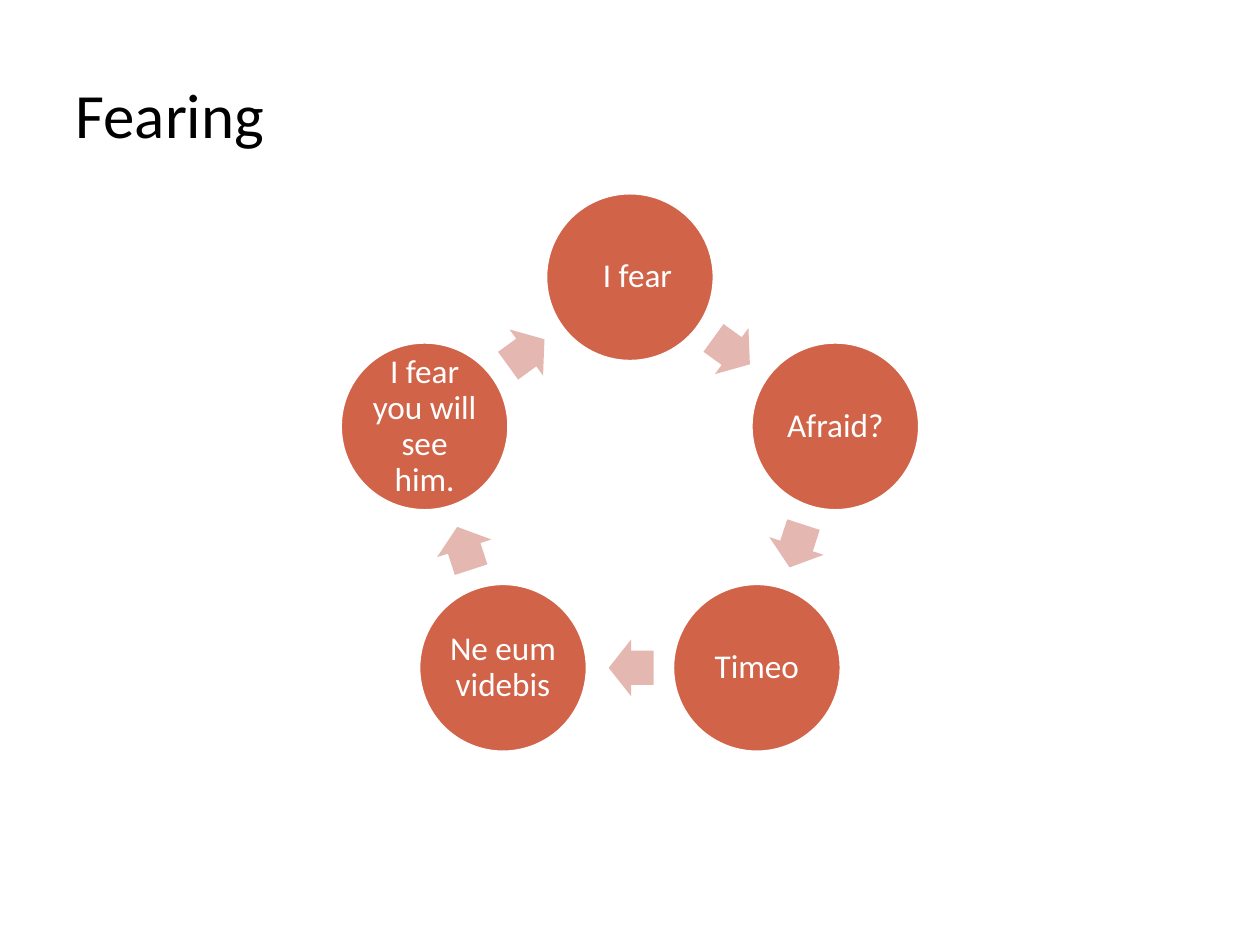
"""Build a slide with a five-step circular cycle about fearing."""
from math import cos, radians, sin

from pptx import Presentation
from pptx.dml.color import RGBColor
from pptx.enum.shapes import MSO_SHAPE
from pptx.enum.text import MSO_ANCHOR, PP_ALIGN
from pptx.util import Pt

COLORS = {"title": "000000", "node": "D16349", "arrow": "E5B7B1", "white": "FFFFFF"}
FONT = "Calibri"
STEPS = ["I fear", "Afraid?", "Timeo", "Ne eum videbis", "I fear you will see him."]
FIRST_INDENT = 8.6
CENTER_X, CENTER_Y, RADIUS = 360, 281.8, 123.4
NODE_SIZE = 96.5
ARROW_W, ARROW_H = 25.7, 32.6
ARROW_SETBACK = 0.7
INSET = 2.16


def rgb(name):
    return RGBColor.from_string(COLORS[name])


def add_run(p, text, size, color):
    r = p.add_run()
    r.text = text
    r.font.name = FONT
    r.font.size = Pt(size)
    r.font.color.rgb = rgb(color)


def add_title(s, text):
    sp = s.shapes.title
    sp.left, sp.top, sp.width, sp.height = Pt(36), Pt(6), Pt(534), Pt(84)
    tf = sp.text_frame
    tf.vertical_anchor = MSO_ANCHOR.BOTTOM
    p = tf.paragraphs[0]
    p.alignment = PP_ALIGN.LEFT
    add_run(p, text, 36, "title")


def add_centered(s, kind, x, y, w, h, fill):
    sp = s.shapes.add_shape(kind, Pt(x - w / 2), Pt(y - h / 2), Pt(w), Pt(h))
    sp.shadow.inherit = False
    sp.fill.solid()
    sp.fill.fore_color.rgb = rgb(fill)
    return sp


def add_node(s, x, y, text, indent):
    sp = add_centered(s, MSO_SHAPE.OVAL, x, y, NODE_SIZE, NODE_SIZE, "node")
    sp.line.color.rgb = rgb("white")
    sp.line.width = Pt(2)
    tf = sp.text_frame
    tf.word_wrap = True
    tf.vertical_anchor = MSO_ANCHOR.MIDDLE
    tf.margin_left = Pt(INSET + indent)
    tf.margin_right = tf.margin_top = tf.margin_bottom = Pt(INSET)
    p = tf.paragraphs[0]
    p.alignment = PP_ALIGN.CENTER
    p.line_spacing = 0.9
    add_run(p, text, 19, "white")


def add_arrow(s, x, y, angle):
    x -= ARROW_SETBACK * cos(radians(angle))
    y -= ARROW_SETBACK * sin(radians(angle))
    sp = add_centered(s, MSO_SHAPE.RIGHT_ARROW, x, y, ARROW_W, ARROW_H, "arrow")
    sp.line.fill.background()
    sp.adjustments[0] = 0.6
    sp.adjustments[1] = 0.5
    sp.rotation = angle


def ring_point(angle, radius):
    a = radians(angle)
    return CENTER_X + radius * sin(a), CENTER_Y - radius * cos(a)


def add_cycle(s, steps):
    step = 360 / len(steps)
    mid_radius = RADIUS * cos(radians(step / 2))
    for i, text in enumerate(steps):
        angle = i * step
        add_node(s, *ring_point(angle, RADIUS), text, 0 if i else FIRST_INDENT)
        mid = angle + step / 2
        add_arrow(s, *ring_point(mid, mid_radius), mid)


def main():
    prs = Presentation()
    prs.slide_width, prs.slide_height = Pt(720), Pt(540)
    s = prs.slides.add_slide(prs.slide_layouts[5])
    add_title(s, "Fearing")
    add_cycle(s, STEPS)
    prs.save("out.pptx")


if __name__ == "__main__":
    main()
